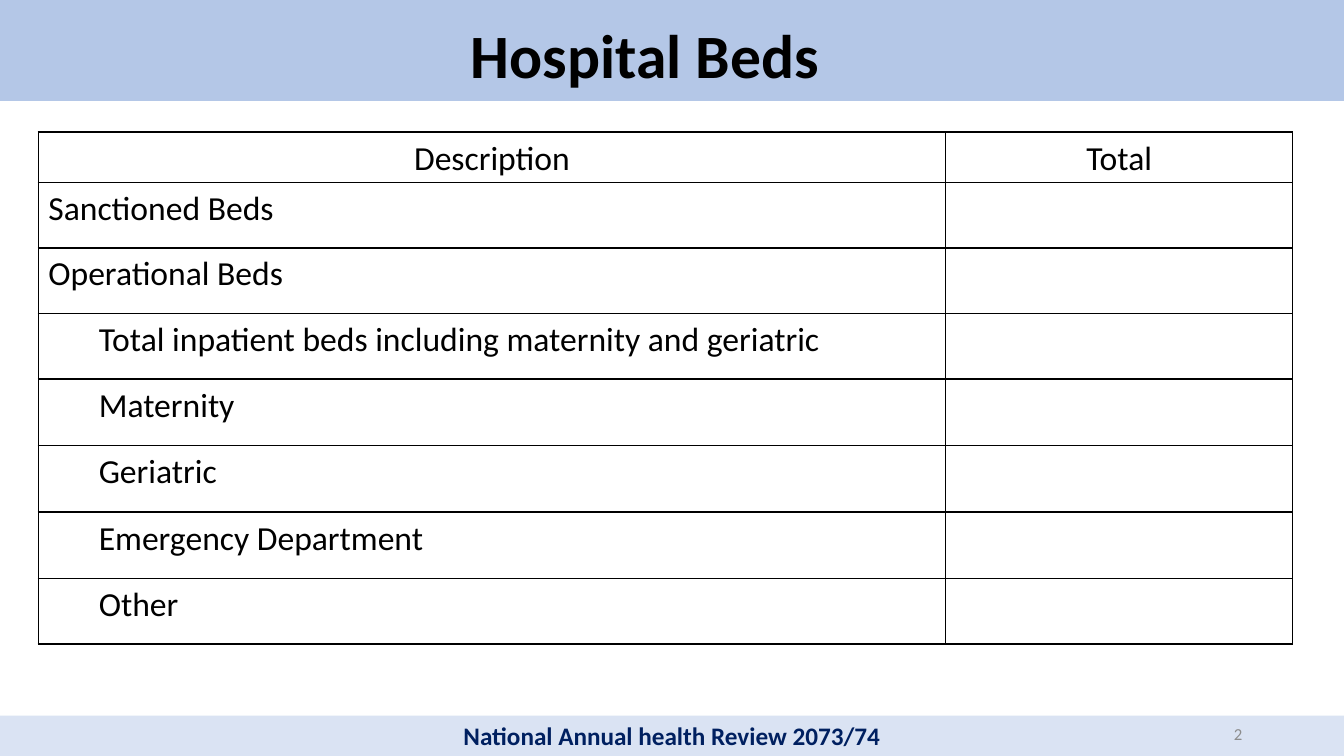
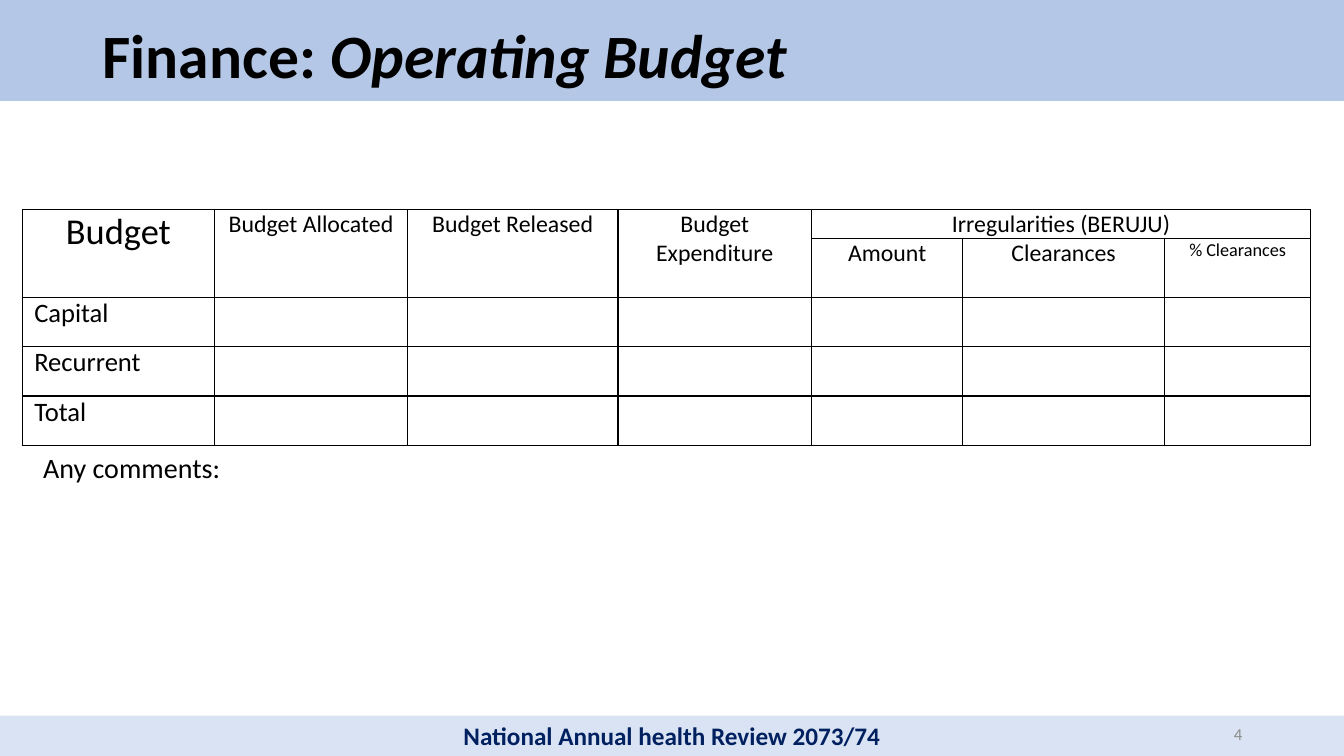
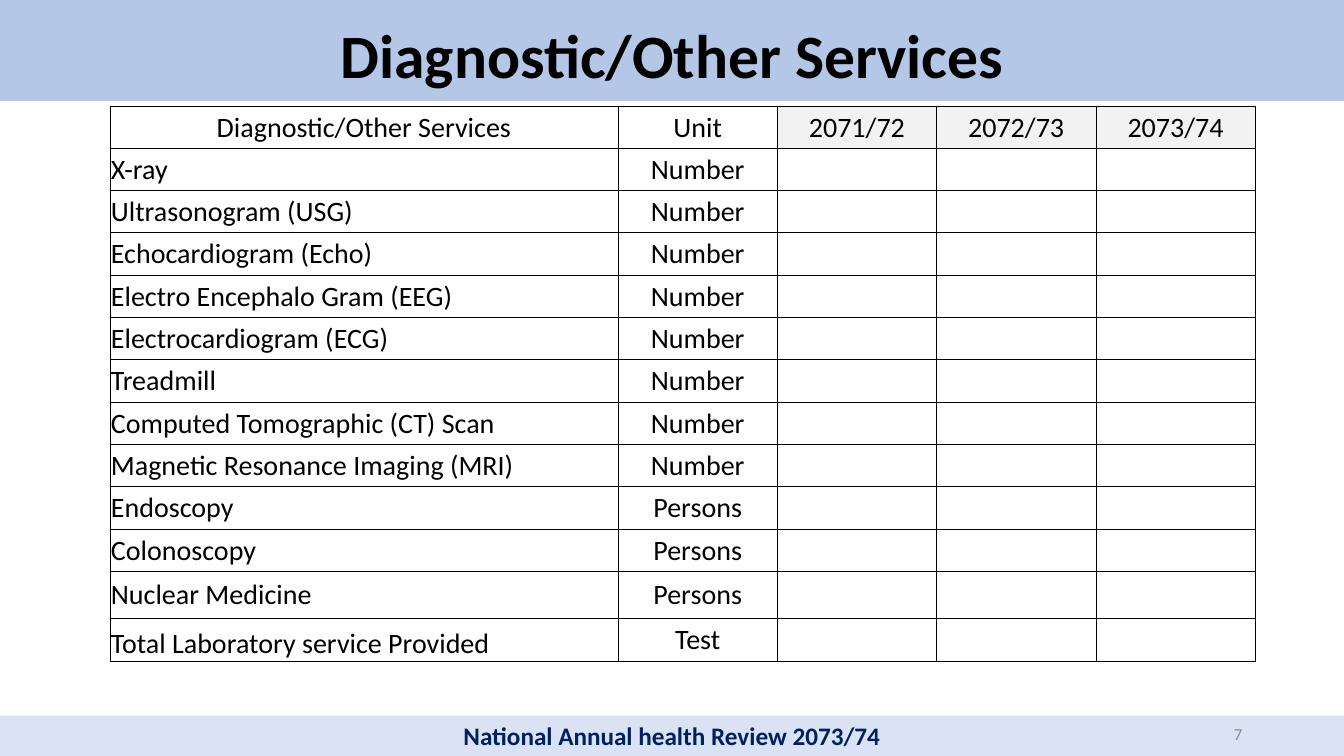
from lxml.etree import SubElement
from pptx import Presentation
from pptx.dml.color import RGBColor
from pptx.enum.shapes import MSO_SHAPE
from pptx.enum.text import MSO_ANCHOR, PP_ALIGN
from pptx.oxml.ns import qn
from pptx.util import Inches, Pt

FONT = "Calibri"
BLACK, WHITE, NAVY, GREY = "000000", "FFFFFF", "002060", "8C8C8C"
TITLE_BAND, FOOTER_BAND, YEAR_FILL = "B4C7E7", "DAE3F3", "F2F2F2"
SLIDE_WIDTH, SLIDE_HEIGHT = 13.33, 7.5
FOOTER = "National Annual health Review 2073/74"

BEDS = {
    "at": (0.38, 1.31),
    "columns": [9, 3.44],
    "heights": [0.5] + [0.65] * 3 + [0.66] * 3 + [0.65],
    "rows": [
        ("Description", "Total"),
        ("Sanctioned Beds",),
        ("Operational Beds",),
        ("Total inpatient beds including maternity and geriatric",),
        ("Maternity",),
        ("Geriatric",),
        ("Emergency Department",),
        ("Other",),
    ],
    "size": 24,
    "margins": (0.1, 0, 0.1, 0),
    "border": 1,
    "line_spacing": 1.15,
    "indented": range(3, 8),
}

BUDGET = {
    "at": (0.22, 2.08),
    "columns": [1.91, 1.91, 2.09, 1.92, 1.5, 2, 1.45],
    "heights": [0.29, 0.58] + [0.49] * 3,
    "rows": [
        ("Budget", "Budget Allocated", "Budget Released", "Budget Expenditure",
         "Irregularities (BERUJU)"),
        ("", "", "", "", "Amount", "Clearances", "% Clearances"),
        ("Capital",),
        ("Recurrent",),
        ("Total",),
    ],
    "size": 17,
    "sizes": {"Budget": 26, "% Clearances": 13,
              "Capital": 19, "Recurrent": 19, "Total": 19},
    "margins": (0.12, 0, 0.12, 0),
    "border": 1,
    "header_rows": 2,
    "merges": [((0, column), (1, column)) for column in range(4)] + [((0, 4), (0, 6))],
}

SERVICES = {
    "at": (1.09, 1.05),
    "columns": [5.04] + [1.58] * 4,
    "heights": [0.42] * 11 + [0.47, 0.42],
    "rows": [
        ("Diagnostic/Other Services", "Unit", "2071/72", "2072/73", "2073/74"),
        ("X-ray", "Number"),
        ("Ultrasonogram (USG)", "Number"),
        ("Echocardiogram (Echo)", "Number"),
        ("Electro Encephalo Gram (EEG)", "Number"),
        ("Electrocardiogram (ECG)", "Number"),
        ("Treadmill", "Number"),
        ("Computed Tomographic (CT) Scan", "Number"),
        ("Magnetic Resonance Imaging (MRI)", "Number"),
        ("Endoscopy", "Persons"),
        ("Colonoscopy", "Persons"),
        ("Nuclear Medicine", "Persons"),
        ("Total Laboratory service Provided", "Test"),
    ],
    "size": 20,
    "margins": (0.01, 0.01, 0.01, 0),
    "border": 0.5,
    "anchor": MSO_ANCHOR.MIDDLE,
    "anchors": {(12, 0): MSO_ANCHOR.BOTTOM},
    "fills": {(0, column): YEAR_FILL for column in (2, 3, 4)},
}

TITLE_BOX = (0.92, 0.09, 11.5, 0.99)
SLIDES = [
    {"number": "2", "title": [("Hospital Beds", False)], "align": PP_ALIGN.CENTER,
     "title_box": (0.38, 0.09, 12.04, 0.99), "table": BEDS},
    {"number": "4", "title": [("Finance: ", False), ("Operating Budget", True)],
     "align": PP_ALIGN.LEFT, "table": BUDGET, "comment": "Any comments:"},
    {"number": "7", "title": [("Diagnostic/Other Services", False)],
     "align": PP_ALIGN.CENTER, "table": SERVICES},
]


def rgb(value):
    return RGBColor.from_string(value)


def add_run(paragraph, text, size, color=BLACK, **styles):
    run = paragraph.add_run()
    run.text = text
    run.font.color.rgb = rgb(color)
    for name, value in {"name": FONT, "size": Pt(size), **styles}.items():
        setattr(run.font, name, value)


def add_band(slide, top, height, color):
    band = slide.shapes.add_shape(MSO_SHAPE.RECTANGLE, 0, Inches(top),
                                  Inches(SLIDE_WIDTH), Inches(height))
    band.shadow.inherit = False
    band.fill.solid()
    band.fill.fore_color.rgb = rgb(color)
    band.line.fill.background()
    return band


def add_text(slide, box, align=PP_ALIGN.LEFT, anchor=MSO_ANCHOR.MIDDLE):
    """Add a wrapping text box and return its first paragraph."""
    frame = slide.shapes.add_textbox(*map(Inches, box)).text_frame
    frame.word_wrap = True
    frame.vertical_anchor = anchor
    frame.paragraphs[0].alignment = align
    return frame.paragraphs[0]


def set_borders(cell, width):
    properties = cell._tc.get_or_add_tcPr()
    for side in ("a:lnL", "a:lnR", "a:lnT", "a:lnB"):
        line = SubElement(properties, qn(side), w=str(Pt(width)))
        fill = SubElement(line, qn("a:solidFill"))
        SubElement(fill, qn("a:srgbClr"), val=BLACK)


def format_cell(cell, table, row, column):
    sides = ("margin_left", "margin_top", "margin_right", "margin_bottom")
    for side, margin in zip(sides, table["margins"]):
        setattr(cell, side, Inches(margin))
    anchor = table.get("anchor", MSO_ANCHOR.TOP)
    cell.vertical_anchor = table.get("anchors", {}).get((row, column), anchor)
    set_borders(cell, table["border"])
    cell.fill.solid()
    cell.fill.fore_color.rgb = rgb(table.get("fills", {}).get((row, column), WHITE))


def fill_cell(cell, table, row, column):
    texts = table["rows"][row]
    text = texts[column] if column < len(texts) else ""
    paragraph = cell.text_frame.paragraphs[0]
    if not text:
        # An empty cell still needs a text size, or it stretches its row.
        SubElement(paragraph._p, qn("a:endParaRPr"), sz=str(table["size"] * 100))
        return
    centered = row < table.get("header_rows", 1) or column > 0
    paragraph.alignment = PP_ALIGN.CENTER if centered else PP_ALIGN.LEFT
    if "line_spacing" in table:
        paragraph.line_spacing = table["line_spacing"]
    if row in table.get("indented", ()):
        paragraph.level = 1
        paragraph._p.get_or_add_pPr().set("marL", str(Inches(0.5)))
    add_run(paragraph, text, table.get("sizes", {}).get(text, table["size"]))


def add_grid(slide, table):
    columns, heights = table["columns"], table["heights"]
    size = (sum(columns), sum(heights))
    grid = slide.shapes.add_table(len(heights), len(columns),
                                  *map(Inches, table["at"] + size)).table
    grid.first_row = grid.horz_banding = False
    for column, width in zip(grid.columns, columns):
        column.width = Inches(width)
    for row, height in enumerate(heights):
        grid.rows[row].height = Inches(height)
        for column in range(len(columns)):
            cell = grid.cell(row, column)
            format_cell(cell, table, row, column)
            fill_cell(cell, table, row, column)
    for first, last in table.get("merges", ()):
        grid.cell(*first).merge(grid.cell(*last))


def add_frame(slide, content):
    """Add what every slide shares: bands, title, footer and number."""
    footer = add_band(slide, 7.1, 0.4, FOOTER_BAND).text_frame.paragraphs[0]
    footer.alignment = PP_ALIGN.CENTER
    add_run(footer, FOOTER, 18, NAVY, bold=True)
    add_band(slide, -0.09, 1.09, TITLE_BAND)
    title = add_text(slide, content.get("title_box", TITLE_BOX), content["align"])
    title.line_spacing = 0.9
    for text, italic in content["title"]:
        add_run(title, text, 44, bold=True, italic=italic)
    number = add_text(slide, (9.42, 7.08, 3, 0.4), PP_ALIGN.RIGHT)
    add_run(number, content["number"], 12, GREY)


def main():
    presentation = Presentation()
    presentation.slide_width = Inches(SLIDE_WIDTH)
    presentation.slide_height = Inches(SLIDE_HEIGHT)
    for content in SLIDES:
        slide = presentation.slides.add_slide(presentation.slide_layouts[6])
        add_frame(slide, content)
        add_grid(slide, content["table"])
        if "comment" in content:
            comment = add_text(slide, (0.33, 4.42, 12.44, 1.45), anchor=MSO_ANCHOR.TOP)
            add_run(comment, content["comment"], 20)
    presentation.save("out.pptx")


if __name__ == "__main__":
    main()
